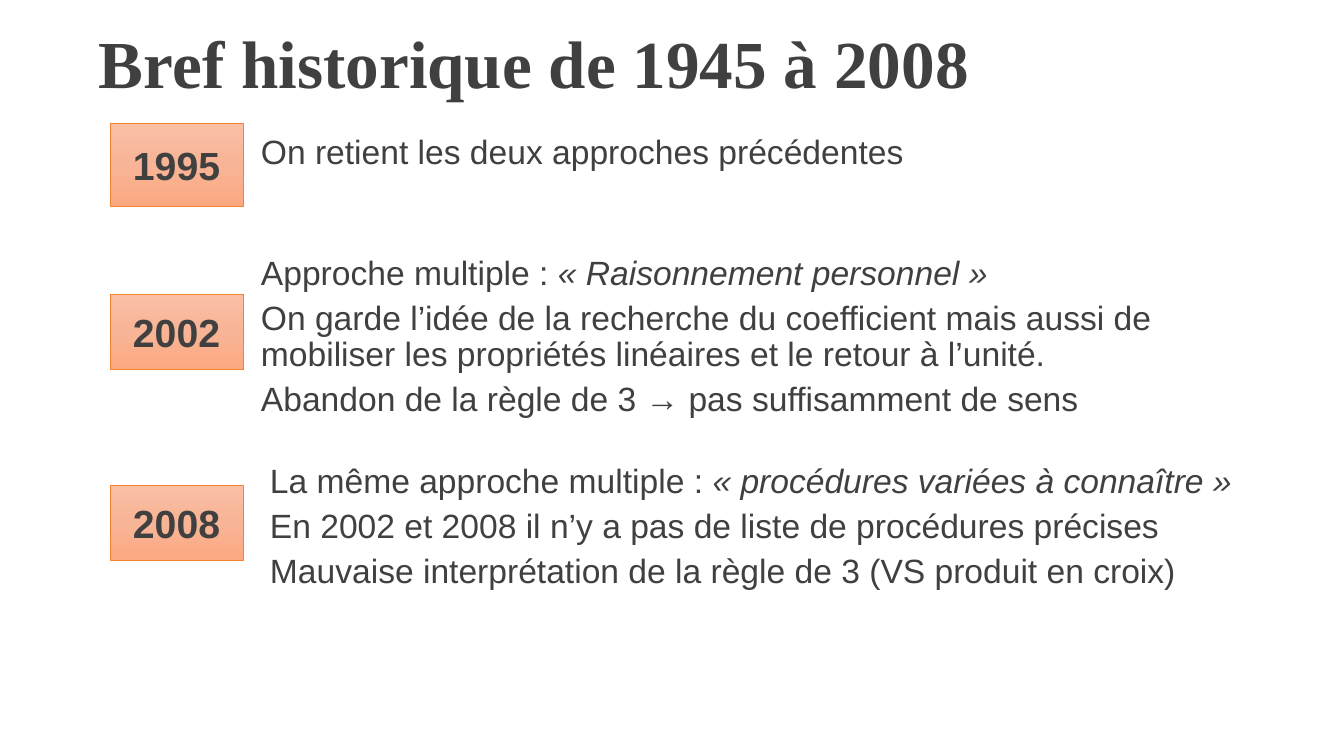
from copy import deepcopy

from pptx import Presentation
from pptx.dml.color import RGBColor
from pptx.enum.shapes import MSO_SHAPE
from pptx.enum.text import MSO_ANCHOR, PP_ALIGN
from pptx.oxml.ns import qn
from pptx.util import Emu, Pt

PX_PER_INCH = 100.8
COLORS = {
    "text": "404040",
    "border": "F28330",
    "top": "FAC0A5",
    "middle": "F8B496",
    "bottom": "FCA982",
}
BODY_INDENT = 101
SPACE_INDENT = 110


def px(length):
    return Emu(round(length * 914400 / PX_PER_INCH))


def color(name):
    return RGBColor.from_string(COLORS[name])


class SlideBuilder:
    def __init__(self, page):
        self.page = page

    def add_span(self, para, text, size, font="Arial", bold=False, italic=False):
        span = para.add_run()
        span.text = text
        span.font.name = font
        span.font.size = Pt(size)
        span.font.bold = bold
        span.font.italic = italic
        span.font.color.rgb = color("text")

    def text_box(self, left, top, width, height, anchor=MSO_ANCHOR.TOP):
        box = self.page.shapes.add_textbox(px(left), px(top), px(width), px(height))
        frame = box.text_frame
        frame.word_wrap = True
        frame.vertical_anchor = anchor
        return frame

    def title(self, text):
        para = self.text_box(89, 11, 1122, 97, MSO_ANCHOR.BOTTOM).paragraphs[0]
        para.line_spacing = 0.9
        self.add_span(para, text, 48, "Times New Roman", bold=True)

    def body(self, paragraphs):
        """Each paragraph is (space before in points, indent, text, quoted text)."""
        frame = self.text_box(150, 130, 1122, 545)
        for number, (space, indent, text, quote) in enumerate(paragraphs):
            para = frame.add_paragraph() if number else frame.paragraphs[0]
            para.line_spacing = 0.9
            para.space_before = Pt(space)
            para._p.get_or_add_pPr().set("marL", str(px(indent)))
            self.add_span(para, text, 24)
            if quote:
                self.add_span(para, quote, 24, italic=True)

    def year(self, text, top, height):
        shape = self.page.shapes.add_shape(
            MSO_SHAPE.FLOWCHART_PROCESS, px(110), px(top), px(133), px(height))
        shape.shadow.inherit = False
        self.gradient(shape)
        shape.line.color.rgb = color("border")
        shape.line.width = Pt(0.5)
        shape.text_frame.vertical_anchor = MSO_ANCHOR.MIDDLE
        para = shape.text_frame.paragraphs[0]
        para.alignment = PP_ALIGN.CENTER
        self.add_span(para, text, 28, bold=True)

    def gradient(self, shape):
        shape.fill.gradient()
        shape.fill.gradient_angle = 270
        stops = shape._element.spPr.find(qn("a:gradFill")).find(qn("a:gsLst"))
        stops.insert(1, deepcopy(stops[0]))
        names = ("top", "middle", "bottom")
        for number, stop in enumerate(shape.fill.gradient_stops):
            stop.position = number / 2
            stop.color.rgb = color(names[number])


def main():
    deck = Presentation()
    deck.slide_width, deck.slide_height = px(1344), px(756)
    builder = SlideBuilder(deck.slides.add_slide(deck.slide_layouts[6]))
    builder.title("Bref historique de 1945 à 2008")
    builder.body([
        (0, BODY_INDENT, "On retient les deux approches précédentes", ""),
        (61, BODY_INDENT, "Approche multiple : ", "« Raisonnement personnel »"),
        (6, BODY_INDENT, "On garde l’idée de la recherche du coefficient mais aussi de "
         "mobiliser les propriétés linéaires et le retour à l’unité.", ""),
        (6, BODY_INDENT, "Abandon de la règle de 3 → pas suffisamment de sens", ""),
        (33, SPACE_INDENT, "La même approche multiple : ",
         "« procédures variées à connaître »"),
        (6, SPACE_INDENT,
         "En 2002 et 2008 il n’y a pas de liste de procédures précises", ""),
        (6, SPACE_INDENT,
         "Mauvaise interprétation de la règle de 3 (VS produit en croix)", ""),
    ])
    for text, top, height in (("1995", 123, 83), ("2002", 294, 75), ("2008", 485, 75)):
        builder.year(text, top, height)
    deck.save("out.pptx")


if __name__ == "__main__":
    main()
